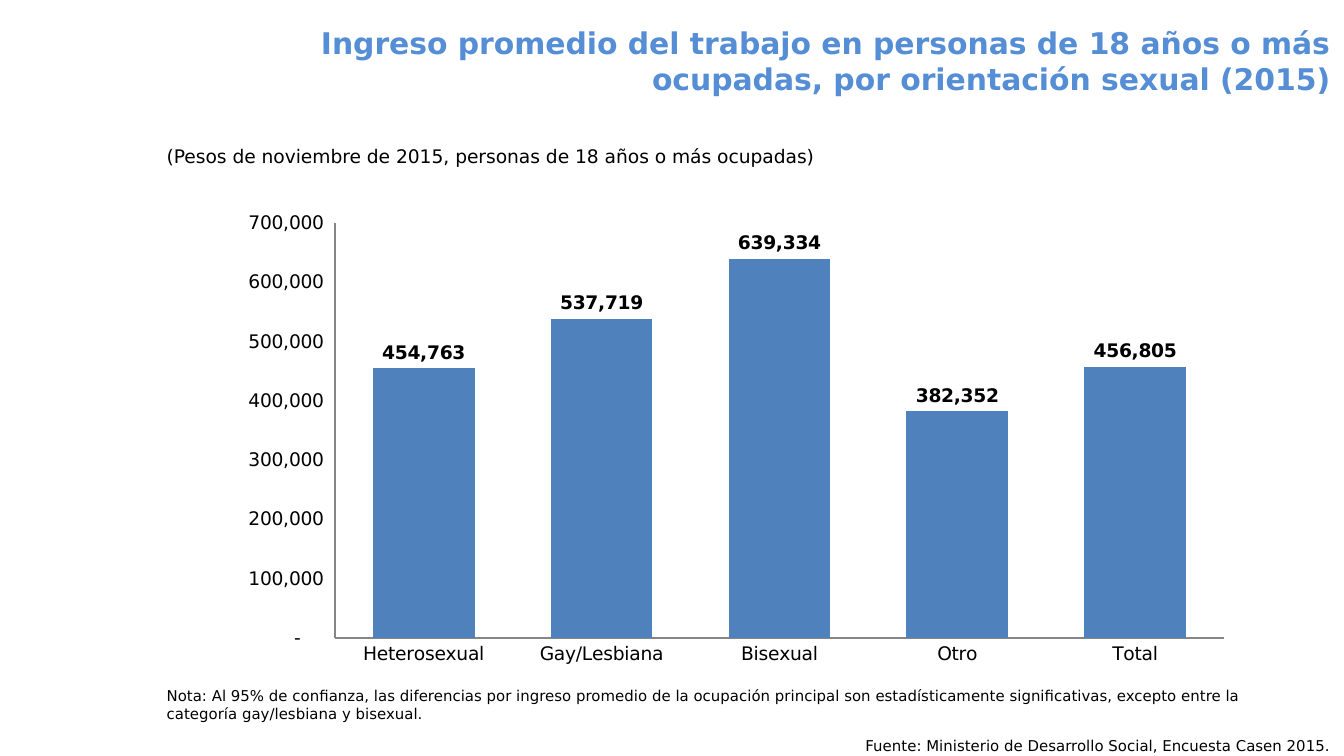
from pptx import Presentation
from pptx.chart.data import CategoryChartData
from pptx.dml.color import RGBColor
from pptx.enum.chart import XL_CHART_TYPE, XL_LABEL_POSITION, XL_TICK_MARK
from pptx.enum.shapes import MSO_SHAPE
from pptx.enum.text import MSO_ANCHOR, PP_ALIGN
from pptx.util import Cm, Pt

COLUMNS = XL_CHART_TYPE.COLUMN_CLUSTERED
LABELS_ABOVE = XL_LABEL_POSITION.OUTSIDE_END
NO_TICKS = XL_TICK_MARK.NONE
RECTANGLE = MSO_SHAPE.RECTANGLE
TOP, MIDDLE = MSO_ANCHOR.TOP, MSO_ANCHOR.MIDDLE
LEFT, RIGHT = PP_ALIGN.LEFT, PP_ALIGN.RIGHT

FONT_NAME = "DejaVu Sans"
BLACK, WHITE, TITLE_BLUE = "000000", "FFFFFF", "558ED5"
BAR_BLUE, AXIS_GRAY = "4F81BD", "868686"
NUMBER_FORMAT = r'_-* #,##0_-;\-* #,##0_-;_-* "-"??_-;_-@_'
INCOMES = {
    "Heterosexual": 454763,
    "Gay/Lesbiana": 537719,
    "Bisexual": 639334,
    "Otro": 382352,
    "Total": 456805,
}


def color(value):
    return RGBColor.from_string(value)


def format_font(font, size, hex_color=BLACK, bold=False):
    values = {"name": FONT_NAME, "size": Pt(size), "bold": bold}
    for name, value in values.items():
        setattr(font, name, value)
    font.color.rgb = color(hex_color)


def write_text(shape, text, size, hex_color=BLACK, bold=False,
               align=LEFT, anchor=TOP, wrap=True):
    frame = shape.text_frame
    for name, value in {"word_wrap": wrap, "vertical_anchor": anchor}.items():
        setattr(frame, name, value)
    para = frame.paragraphs[0]
    para.alignment = align
    span = para.add_run()
    span.text = text
    format_font(span.font, size, hex_color, bold)


def add_text(page, box, text, size, **options):
    write_text(page.shapes.add_textbox(*box), text, size, **options)


def add_source(page, box, text):
    shape = page.shapes.add_shape(RECTANGLE, *box)
    shape.shadow.inherit = False
    shape.fill.solid()
    shape.fill.fore_color.rgb = color(WHITE)
    shape.line.fill.background()
    write_text(shape, text, 8, align=RIGHT, wrap=False)


def format_axis(axis):
    values = {
        "major_tick_mark": NO_TICKS,
        "minor_tick_mark": NO_TICKS,
        "has_major_gridlines": False,
    }
    for name, value in values.items():
        setattr(axis, name, value)
    format_font(axis.tick_labels.font, 10)
    axis.format.line.color.rgb = color(AXIS_GRAY)
    axis.format.line.width = Pt(0.75)


def format_labels(labels):
    values = {
        "show_value": True,
        "number_format": NUMBER_FORMAT,
        "number_format_is_linked": False,
        "position": LABELS_ABOVE,
    }
    for name, value in values.items():
        setattr(labels, name, value)
    format_font(labels.font, 10, bold=True)


def add_income_chart(page, box):
    data = CategoryChartData()
    data.categories = list(INCOMES)
    data.add_series("Ingreso promedio", list(INCOMES.values()))
    chart = page.shapes.add_chart(COLUMNS, *box, data).chart
    chart.has_legend = False
    chart.has_title = False
    format_font(chart.font, 10)

    for axis in (chart.category_axis, chart.value_axis):
        format_axis(axis)
    scale = {"minimum_scale": 0, "maximum_scale": 700000, "major_unit": 100000}
    for name, value in scale.items():
        setattr(chart.value_axis, name, value)
    tick_labels = chart.value_axis.tick_labels
    tick_labels.number_format = NUMBER_FORMAT
    tick_labels.number_format_is_linked = False

    plot = chart.plots[0]
    plot.gap_width = 75
    plot.vary_by_categories = False
    bars = plot.series[0]
    bars.format.fill.solid()
    bars.format.fill.fore_color.rgb = color(BAR_BLUE)
    format_labels(bars.data_labels)


def add_income_slide(deck):
    page = deck.slides.add_slide(deck.slide_layouts[6])
    add_text(
        page, (Cm(2.8), Cm(0.33), Cm(22.6), Cm(1.63)),
        "Ingreso promedio del trabajo en personas de 18 años o más ocupadas, "
        "por orientación sexual (2015)",
        16, hex_color=TITLE_BLUE, bold=True, align=RIGHT, anchor=MIDDLE)
    add_source(
        page, (Cm(12.2), Cm(13.8), Cm(13.2), Cm(0.43)),
        "Fuente: Ministerio de Desarrollo Social, Encuesta Casen 2015.")
    add_income_chart(page, (Cm(4.2), Cm(3.84), Cm(19.32), Cm(8.9)))
    add_text(
        page, (Cm(2.9), Cm(12.85), Cm(22.12), Cm(0.94)),
        "Nota: Al 95% de confianza, las diferencias por ingreso promedio de la "
        "ocupación principal son estadísticamente significativas, excepto entre "
        "la categoría gay/lesbiana y bisexual.", 8)
    add_text(
        page, (Cm(2.9), Cm(2.62), Cm(13.06), Cm(0.69)),
        "(Pesos de noviembre de 2015, personas de 18 años o más ocupadas)",
        10, wrap=False)


def main():
    deck = Presentation()
    deck.slide_width = Cm(25.4)
    deck.slide_height = Cm(14.29)
    add_income_slide(deck)
    deck.save("out.pptx")


if __name__ == "__main__":
    main()
